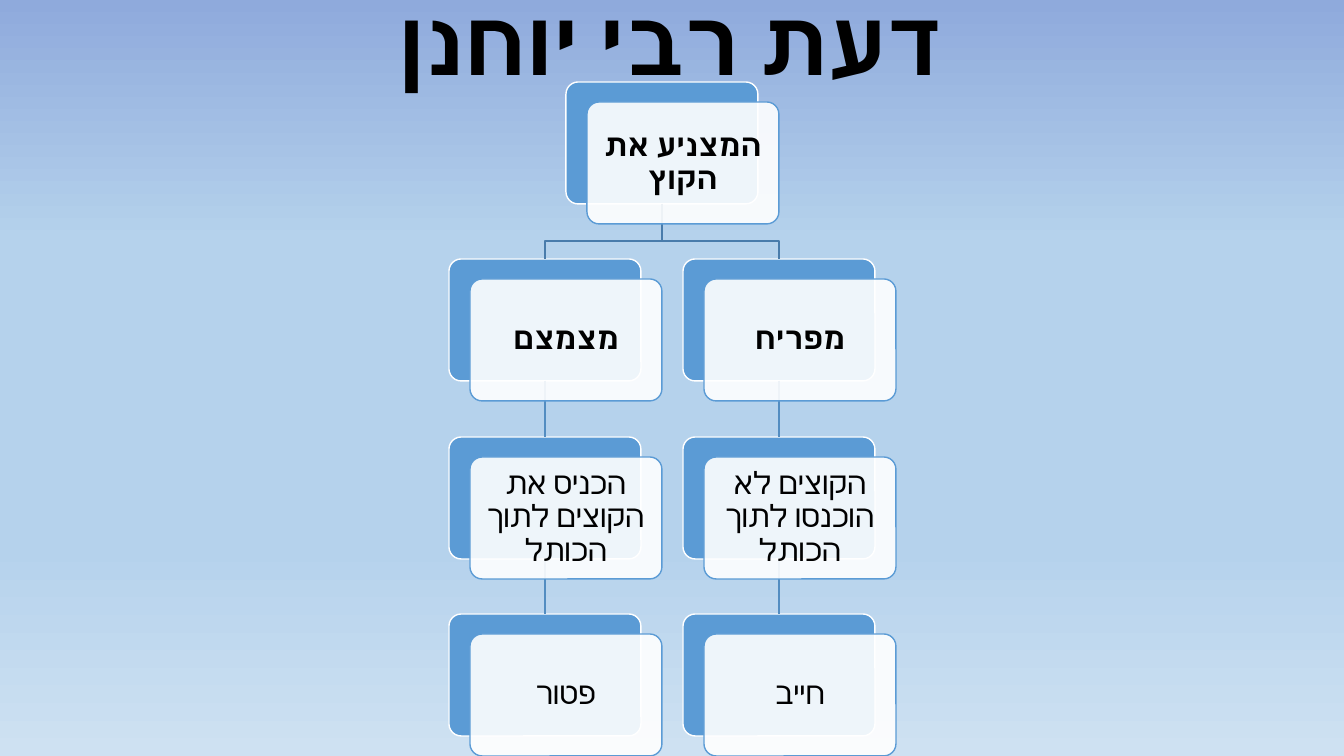
"""Builds the slide that charts Rabbi Yochanan's opinion as a tree of cards."""
from lxml.etree import SubElement
from pptx import Presentation
from pptx.dml.color import RGBColor
from pptx.enum.shapes import MSO_CONNECTOR as CONNECTOR, MSO_SHAPE as SHAPE
from pptx.enum.text import MSO_ANCHOR as ANCHOR, PP_ALIGN as ALIGN
from pptx.oxml.ns import qn
from pptx.util import Pt

PX = 914400 / 100.8
SLIDE_W, SLIDE_H = 1344, 756
CARD_W, CARD_H = 192, 122
CARD_SHIFT = 21
ROOT_LEFT, ROOT_TOP = 566, 82
COLUMN_OFFSET = 117
BEND_DEPTH = 37
TITLE_H = 93

BLACK = RGBColor(0x00, 0x00, 0x00)
WHITE = RGBColor(0xFF, 0xFF, 0xFF)
CARD_BLUE = RGBColor(0x5B, 0x9B, 0xD5)
BRANCH_BLUE = RGBColor(0x49, 0x7C, 0xAB)
LINK_BLUE = RGBColor(0x53, 0x8D, 0xC1)
SKY = [
    (0, RGBColor(0x8F, 0xAA, 0xDC)),
    (32, RGBColor(0xB5, 0xD2, 0xEC)),
    (72, RGBColor(0xB5, 0xD2, 0xEC)),
    (100, RGBColor(0xCE, 0xE1, 0xF2)),
]

FONT = "Calibri"
TITLE = "דעת רבי יוחנן"
ROOT = "המצניע את הקוץ"
BRANCHES = [
    (-COLUMN_OFFSET, ["מצמצם", "הכניס את הקוצים לתוך הכותל", "פטור"]),
    (COLUMN_OFFSET, ["מפריח", "הקוצים לא הוכנסו לתוך הכותל", "חייב"]),
]


def px(length):
    """Turn pixels into EMU."""
    return round(length * PX)


def row_top(row):
    """Give the top of a row of cards in pixels."""
    return ROOT_TOP + row * 355 // 2


def paint_background(slide):
    """Fill the background with the vertical sky gradient."""
    fill = slide.background.fill
    fill.gradient()
    fill.gradient_angle = 270
    stops = slide.element.find(".//" + qn("a:gsLst"))
    for stop in list(stops):
        stops.remove(stop)
    for percent, colour in SKY:
        stop = SubElement(stops, qn("a:gs"), pos=str(percent * 1000))
        SubElement(stop, qn("a:srgbClr"), val=str(colour))


def write(shape, text, size, bold, inset):
    """Write one centred right-to-left paragraph into a shape."""
    frame = shape.text_frame
    frame.word_wrap = True
    frame.vertical_anchor = ANCHOR.MIDDLE
    frame.margin_left = frame.margin_right = px(inset)
    frame.margin_top = frame.margin_bottom = px(inset)
    paragraph = frame.paragraphs[0]
    paragraph.text = text
    paragraph.alignment = ALIGN.CENTER
    paragraph.line_spacing = 0.9
    font = paragraph.font
    font.size, font.bold, font.name = Pt(size), bold, FONT
    font.color.rgb = BLACK
    properties = paragraph._p.get_or_add_pPr()
    properties.set("rtl", "1")
    SubElement(properties.find(qn("a:defRPr")), qn("a:cs"), typeface=FONT)


def add_title(slide):
    """Add the heading across the top of the slide."""
    heading = slide.shapes.add_textbox(0, 0, px(SLIDE_W), px(TITLE_H))
    write(heading, TITLE, 64.8, True, 5)


def add_card(slide, left, top, fill, line):
    """Add one rounded card."""
    card = slide.shapes.add_shape(
        SHAPE.ROUNDED_RECTANGLE, px(left), px(top), px(CARD_W), px(CARD_H))
    card.adjustments[0] = 0.1
    card.shadow.inherit = False
    card.fill.solid()
    card.fill.fore_color.rgb = fill
    card.line.color.rgb = line
    card.line.width = Pt(1)
    return card


def add_label_card(slide, left, top, text, bold):
    """Add the translucent front card that carries the text."""
    card = add_card(slide, left + CARD_SHIFT, top + CARD_SHIFT - 1, WHITE, CARD_BLUE)
    colour = card._element.spPr.find(qn("a:solidFill"))[0]
    SubElement(colour, qn("a:alpha"), val="90000")
    write(card, text, 22, bold, 9)


def add_branch(slide, offset):
    """Add the bent line from the root card to a column."""
    middle = ROOT_LEFT + CARD_W // 2
    start = ROOT_TOP + CARD_H
    bend = start + BEND_DEPTH
    builder = slide.shapes.build_freeform(middle, start, scale=PX)
    builder.add_line_segments(
        [(middle, bend), (middle + offset, bend), (middle + offset, row_top(1))],
        close=False)
    branch = builder.convert_to_shape()
    branch.shadow.inherit = False
    branch.fill.background()
    branch.line.color.rgb = BRANCH_BLUE
    branch.line.width = Pt(1)


def add_link(slide, upper, lower):
    """Join two cards of a column with a straight line."""
    link = slide.shapes.add_connector(CONNECTOR.STRAIGHT, 0, 0, 0, 0)
    link.begin_connect(upper, 2)
    link.end_connect(lower, 0)
    link.line.color.rgb = LINK_BLUE
    link.line.width = Pt(1)
    SubElement(link._element.spPr, qn("a:effectLst"))


def add_tree(slide):
    """Add the back cards, the lines and the labelled front cards."""
    add_card(slide, ROOT_LEFT, ROOT_TOP, CARD_BLUE, WHITE)
    for offset, labels in BRANCHES:
        left = ROOT_LEFT + offset
        backs = [add_card(slide, left, row_top(row), CARD_BLUE, WHITE)
                 for row in range(1, len(labels) + 1)]
        add_branch(slide, offset)
        for upper, lower in zip(backs, backs[1:]):
            add_link(slide, upper, lower)
        for row, label in enumerate(labels, 1):
            add_label_card(slide, left, row_top(row), label, row == 1)
    add_label_card(slide, ROOT_LEFT, ROOT_TOP, ROOT, True)


def main():
    """Build and save the slide."""
    deck = Presentation()
    deck.slide_width, deck.slide_height = px(SLIDE_W), px(SLIDE_H)
    slide = deck.slides.add_slide(deck.slide_layouts[6])
    paint_background(slide)
    add_title(slide)
    add_tree(slide)
    deck.save("out.pptx")


if __name__ == "__main__":
    main()
